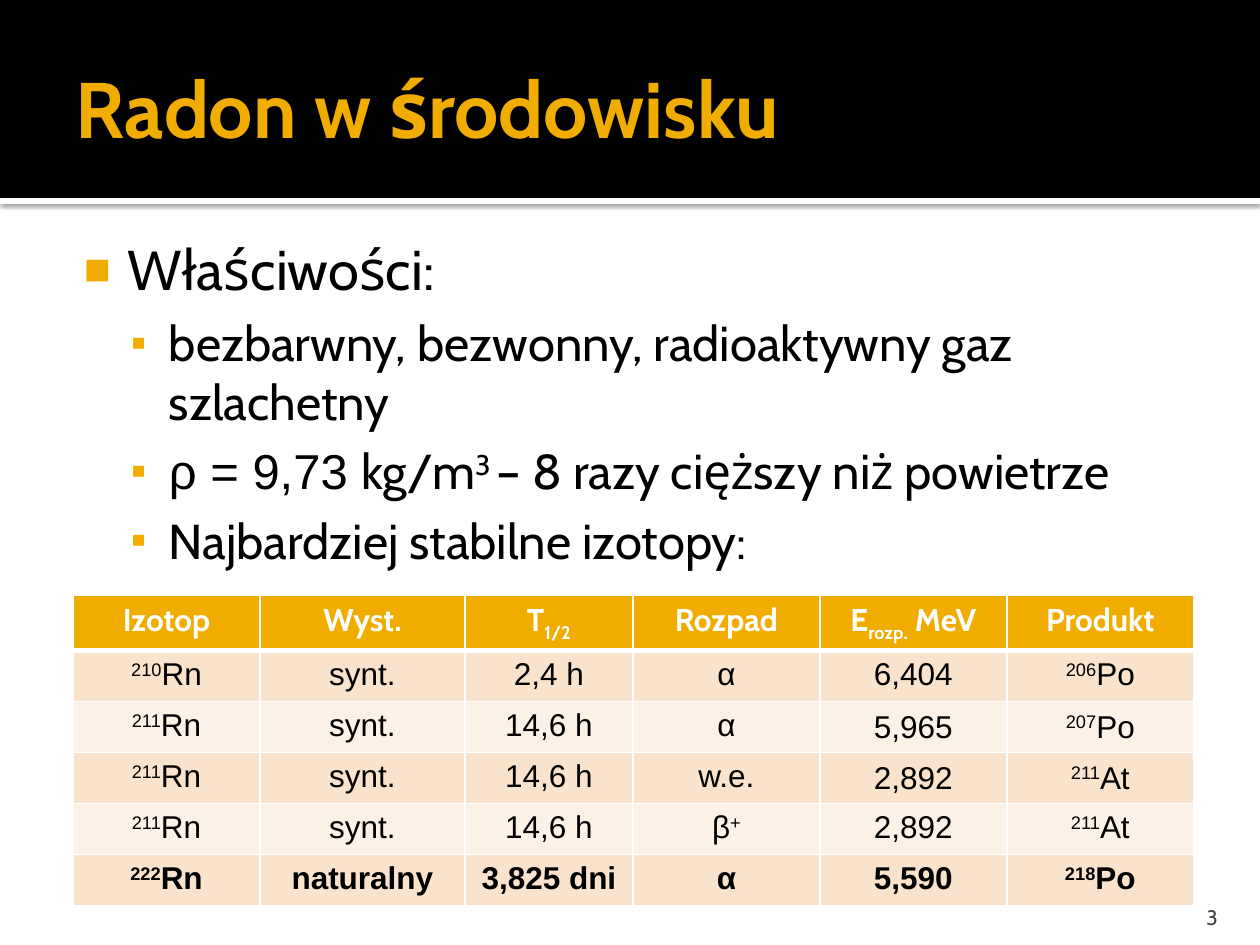
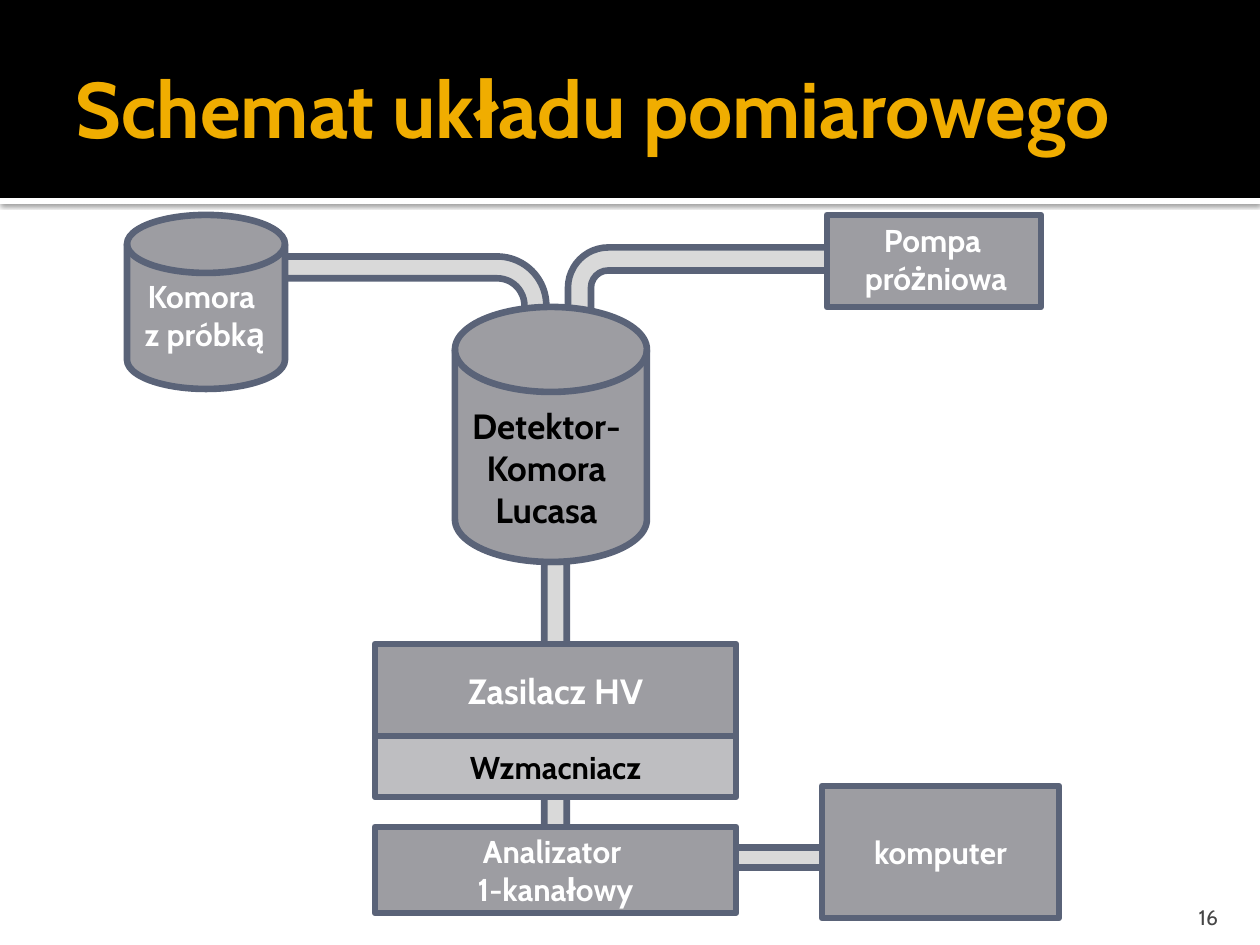
from dataclasses import dataclass
from typing import NamedTuple

from lxml.etree import SubElement
from pptx import Presentation
from pptx.dml.color import RGBColor
from pptx.enum.shapes import MSO_SHAPE
from pptx.enum.text import MSO_ANCHOR, PP_ALIGN
from pptx.oxml.ns import qn
from pptx.util import Emu, Pt

EMU_PER_PX = 914400 / 126
SUPER, SUB = 30000, -25000


@dataclass(frozen=True)
class Theme:
    heading_font: str = "Cabin"
    data_font: str = "Arial"
    accent: str = "F0AD00"
    black: str = "000000"
    white: str = "FFFFFF"
    footer: str = "454545"
    row_dark: str = "F9E3CC"
    row_light: str = "FCF1E7"
    device: str = "9D9DA2"
    device_light: str = "BEBEC1"
    pipe: str = "D9D9D9"
    outline: str = "5A6378"
    title_size: int = 45
    topic_size: int = 32
    point_size: int = 28
    large_label: int = 20
    label: int = 18
    footer_size: int = 12
    outline_width: float = 3.78


THEME = Theme()


class Box(NamedTuple):
    left: int
    top: int
    width: int
    height: int

    def inner(self, left, top, width, height):
        return Box(self.left + left, self.top + top, width, height)

    def emu(self):
        return [px(length) for length in self]


def px(length):
    return Emu(round(length * EMU_PER_PX))


def rgb(color):
    return RGBColor.from_string(color)


def write_text(paragraph, text, size=THEME.label, color=THEME.black, bold=False,
               font=THEME.heading_font, align=PP_ALIGN.LEFT):
    """Write a string, or a list of strings and (text, format) pairs, into a paragraph."""
    paragraph.alignment = align
    for part in [text] if isinstance(text, str) else text:
        content, extra = (part, {}) if isinstance(part, str) else part
        run = paragraph.add_run()
        run.text = content
        run.font.size = Pt(size)
        run.font.bold = bold
        run.font.name = extra.get("font", font)
        run.font.color.rgb = rgb(color)
        if "baseline" in extra:
            run.font._element.set("baseline", str(extra["baseline"]))


def write_lines(frame, lines, **text_format):
    for index, line in enumerate(lines):
        paragraph = frame.add_paragraph() if index else frame.paragraphs[0]
        write_text(paragraph, line, **text_format)


def add_text_box(slide, box, lines, anchor=MSO_ANCHOR.TOP, wrap=True,
                 insets=(13, 6, 13, 6), **text_format):
    frame = slide.shapes.add_textbox(*box.emu()).text_frame
    frame.word_wrap = wrap
    frame.vertical_anchor = anchor
    (frame.margin_left, frame.margin_top,
     frame.margin_right, frame.margin_bottom) = map(px, insets)
    write_lines(frame, lines, **text_format)
    return frame


def add_filled(slide, preset, box, fill, outlined=True):
    shape = slide.shapes.add_shape(preset, *box.emu())
    shape.shadow.inherit = False
    shape.fill.solid()
    shape.fill.fore_color.rgb = rgb(fill)
    if outlined:
        shape.line.color.rgb = rgb(THEME.outline)
        shape.line.width = Pt(THEME.outline_width)
    else:
        shape.line.fill.background()
    return shape


def add_drop_shadow(shape):
    effects = shape._element.spPr.find(qn("a:effectLst"))
    shadow = SubElement(effects, qn("a:outerShdw"), blurRad=str(Pt(2.5)),
                        dist=str(Pt(0.8)), dir="5400000", algn="t", rotWithShape="0")
    color = SubElement(shadow, qn("a:srgbClr"), val=THEME.black)
    SubElement(color, qn("a:alpha"), val="60000")


def add_slide(deck, title, number):
    """Add a slide with the title band and the page number."""
    slide = deck.slides.add_slide(deck.slide_layouts[6])
    stripe = add_filled(slide, MSO_SHAPE.RECTANGLE, Box(0, 198, 1260, 6),
                        THEME.white, outlined=False)
    add_drop_shadow(stripe)
    add_filled(slide, MSO_SHAPE.RECTANGLE, Box(0, 0, 1260, 198),
               THEME.black, outlined=False)
    add_text_box(slide, Box(63, 21, 1173, 173), [title], MSO_ANCHOR.MIDDLE,
                 insets=(13, 6, 6, 6), size=THEME.title_size,
                 color=THEME.accent, bold=True)
    add_text_box(slide, Box(1130, 892, 101, 38), [str(number)], MSO_ANCHOR.BOTTOM,
                 insets=(13, 6, 13, 0), size=THEME.footer_size,
                 color=THEME.footer, align=PP_ALIGN.RIGHT)
    return slide


def set_bullet(paragraph, mark, indent, hanging, percent):
    properties = paragraph._p.get_or_add_pPr()
    properties.set("marL", str(px(indent)))
    properties.set("indent", str(-px(hanging)))
    color = SubElement(properties, qn("a:buClr"))
    SubElement(color, qn("a:srgbClr"), val=THEME.accent)
    SubElement(properties, qn("a:buSzPct"), val=str(percent * 1000))
    SubElement(properties, qn("a:buFont"), typeface=THEME.data_font)
    SubElement(properties, qn("a:buChar"), char=mark)


def add_bullet_list(slide, box, topic, points):
    frame = add_text_box(slide, box, [topic], insets=(8, 13, 13, 6),
                         size=THEME.topic_size)
    set_bullet(frame.paragraphs[0], "■", indent=60, hanging=44, percent=80)
    for point in points:
        paragraph = frame.add_paragraph()
        write_text(paragraph, point, size=THEME.point_size)
        paragraph.space_before = Pt(6)
        set_bullet(paragraph, "▪", indent=101, hanging=38, percent=90)


def set_borders(cell, bottom_width):
    properties = cell._tc.get_or_add_tcPr()
    widths = {"a:lnL": 1, "a:lnR": 1, "a:lnT": 1, "a:lnB": bottom_width}
    for position, (side, width) in enumerate(widths.items()):
        border = properties.makeelement(qn(side), {"w": str(Pt(width))})
        fill = SubElement(border, qn("a:solidFill"))
        SubElement(fill, qn("a:srgbClr"), val=THEME.white)
        properties.insert(position, border)


def add_isotope_table(slide, box, column_widths, header, isotopes):
    rows = [header, *isotopes]
    table = slide.shapes.add_table(len(rows), len(header), *box.emu()).table
    table.first_row = table.horz_banding = False
    for column, width in zip(table.columns, column_widths):
        column.width = px(width)
    for row_index, values in enumerate(rows):
        table.rows[row_index].height = px(box.height // len(rows))
        is_header = row_index == 0
        is_natural = row_index == len(rows) - 1
        band = THEME.row_dark if row_index % 2 else THEME.row_light
        for column_index, value in enumerate(values):
            cell = table.cell(row_index, column_index)
            cell.fill.solid()
            cell.fill.fore_color.rgb = rgb(THEME.accent if is_header else band)
            set_borders(cell, bottom_width=3 if is_header else 1)
            if row_index in (2, 3) and column_index >= 4:
                cell.vertical_anchor = MSO_ANCHOR.MIDDLE
            write_text(cell.text_frame.paragraphs[0], value,
                       color=THEME.white if is_header else THEME.black,
                       bold=is_header or is_natural,
                       font=THEME.heading_font if is_header else THEME.data_font,
                       align=PP_ALIGN.CENTER)


def raised(text):
    return text, {"baseline": SUPER}


def lowered(text):
    return text, {"baseline": SUB}


def isotope(mass, symbol):
    return [raised(str(mass)), symbol]


def build_radon_slide(deck):
    slide = add_slide(deck, "Radon w środowisku", 3)
    add_bullet_list(slide, Box(60, 222, 1134, 638), "Właściwości:", [
        "bezbarwny, bezwonny, radioaktywny gaz szlachetny",
        [("ρ = 9,73 ", {"font": THEME.data_font}), "kg/m", raised("3 "),
         "– 8 razy cięższy niż powietrze"],
        "Najbardziej stabilne izotopy:",
    ])
    header = ["Izotop", "Wyst.", ["T", lowered("1/2")], "Rozpad",
              ["E", lowered("rozp."), " MeV"], "Produkt"]
    isotopes = [
        [isotope(210, "Rn"), "synt.", "2,4 h", "α", "6,404", isotope(206, "Po")],
        [isotope(211, "Rn"), "synt.", "14,6 h", "α", "5,965", isotope(207, "Po")],
        [isotope(211, "Rn"), "synt.", "14,6 h", "w.e.", "2,892", isotope(211, "At")],
        [isotope(211, "Rn"), "synt.", "14,6 h", ["β", raised("+")], "2,892",
         isotope(211, "At")],
        [isotope(222, "Rn"), "naturalny", "3,825 dni", "α", "5,590",
         isotope(218, "Po")],
    ]
    add_isotope_table(slide, Box(73, 595, 1121, 306),
                      [187, 205, 168, 187, 187, 187], header, isotopes)


def add_pipes(slide, box):
    """Draw the pipes, whose arrowheads end up behind the devices."""
    straight, bent = MSO_SHAPE.DOWN_ARROW, MSO_SHAPE.BENT_ARROW
    pipes = [
        (straight, (656, 575, 40, 135), 270, ()),
        (straight, (417, 531, 45, 112), 0, ()),
        (straight, (417, 347, 45, 112), 0, ()),
        (bent, (452, 21, 294, 92), 0, ()),
        (bent, (243, -55, 112, 305), 90, (0.195, 0.287, 0.423, 0.438)),
    ]
    for preset, place, rotation, adjustments in pipes:
        pipe = add_filled(slide, preset, box.inner(*place), THEME.pipe)
        pipe.rotation = rotation
        for index, value in enumerate(adjustments):
            pipe.adjustments[index] = value


def add_devices(slide, box):
    block, drum = MSO_SHAPE.RECTANGLE, MSO_SHAPE.FLOWCHART_MAGNETIC_DISK
    small = dict(size=THEME.label, color=THEME.white)
    large = dict(size=THEME.large_label, color=THEME.white)
    dark = dict(size=THEME.label, color=THEME.black)
    devices = [
        (drum, (339, 92, 192, 255), THEME.device, [], {}),
        (block, (711, 0, 214, 92), THEME.device, [], {}),
        (drum, (11, 0, 158, 174), THEME.device, [], {}),
        (block, (259, 429, 361, 92), THEME.device, ["Zasilacz HV"], large),
        (block, (259, 521, 361, 61), THEME.device_light, ["Wzmacniacz"], dark),
        (block, (259, 612, 361, 86), THEME.device,
         ["Analizator ", "1-kanałowy"], small),
        (block, (706, 571, 237, 132), THEME.device, ["komputer"], small),
    ]
    for preset, place, fill, lines, text_format in devices:
        device = add_filled(slide, preset, box.inner(*place), fill)
        device.text_frame.vertical_anchor = MSO_ANCHOR.MIDDLE
        write_lines(device.text_frame, lines, bold=True,
                    align=PP_ALIGN.CENTER, **text_format)


def add_device_labels(slide, box):
    labels = [
        ((735, 0, 170, 90), ["Pompa ", "próżniowa"], THEME.label, THEME.white),
        ((343, 184, 175, 174), ["Detektor-", "Komora", "Lucasa"],
         THEME.large_label, THEME.black),
        ((0, 56, 178, 90), ["Komora ", "z próbką"], THEME.label, THEME.white),
    ]
    for place, lines, size, color in labels:
        add_text_box(slide, box.inner(*place), lines, wrap=False, size=size,
                     color=color, bold=True, align=PP_ALIGN.CENTER)


def build_setup_slide(deck):
    slide = add_slide(deck, "Schemat układu pomiarowego", 16)
    diagram = Box(116, 215, 943, 703)
    add_pipes(slide, diagram)
    add_devices(slide, diagram)
    add_device_labels(slide, diagram)


def main():
    deck = Presentation()
    deck.slide_width, deck.slide_height = px(1260), px(945)
    build_radon_slide(deck)
    build_setup_slide(deck)
    deck.save("out.pptx")


if __name__ == "__main__":
    main()
